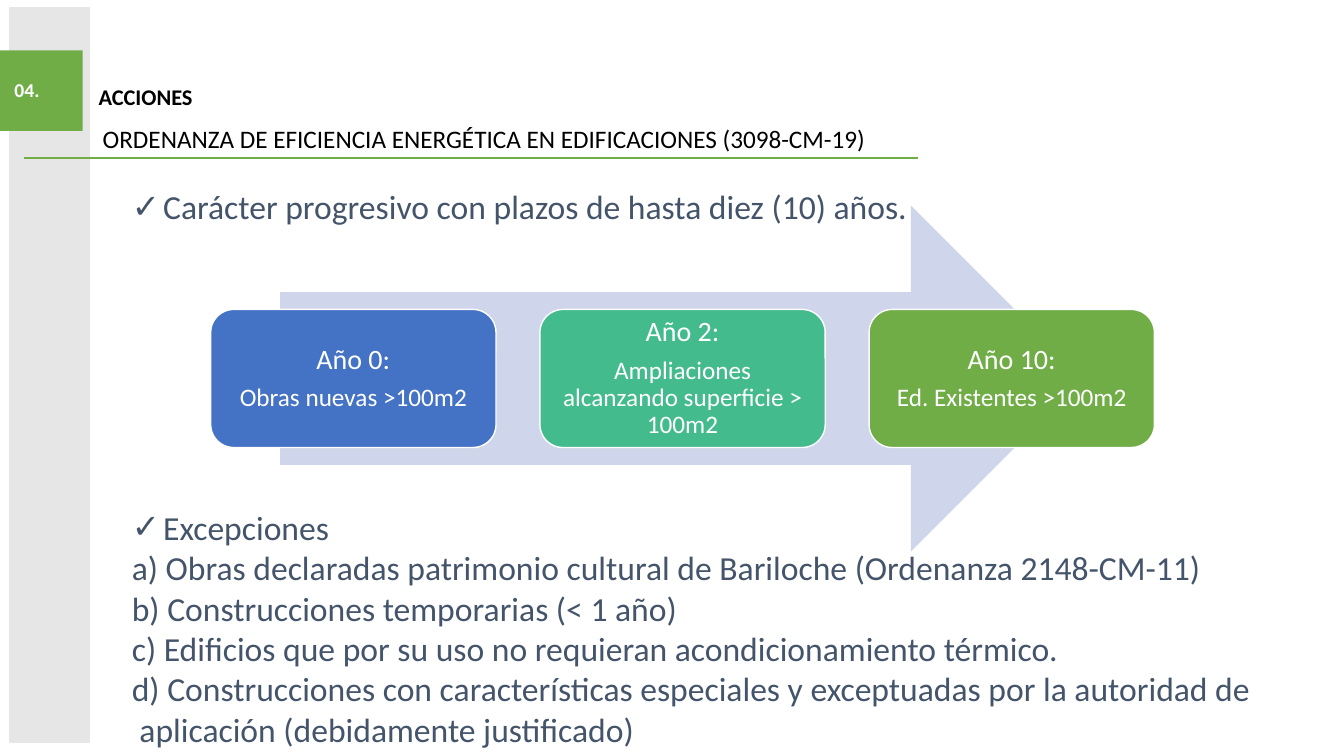
from dataclasses import dataclass

from lxml import etree
from pptx import Presentation
from pptx import util as u
from pptx.dml.color import RGBColor
from pptx.enum import shapes, text
from pptx.oxml.ns import qn

GREEN, WHITE, BLACK, SLATE, GREY = "70AD47", "FFFFFF", "000000", "44546A", "E7E6E6"
SHAPE, ALIGN, ANCHOR = shapes.MSO_SHAPE, text.PP_ALIGN, text.MSO_ANCHOR


@dataclass
class Para:
    text: str
    size: float
    color: str
    bold: bool = False
    align: ALIGN = ALIGN.LEFT
    spacing: float = 1.0
    after: float = 0
    check: bool = False


@dataclass
class Stage:
    year: str
    scope: str
    color: str


def rgb(value: str) -> RGBColor:
    return RGBColor.from_string(value)


def add_check(p) -> None:
    """Give a paragraph a check-mark bullet with a hanging indent."""
    pPr = p._p.get_or_add_pPr()
    indent = u.Inches(0.31)
    pPr.set("marL", str(indent))
    pPr.set("indent", str(-indent))
    etree.SubElement(pPr, qn("a:buFont")).set("typeface", "Arial")
    etree.SubElement(pPr, qn("a:buChar")).set("char", "✓")


def write(sp, paras: list[Para], anchor: ANCHOR, inset: float | None = None) -> None:
    tf = sp.text_frame
    frame = {"word_wrap": True, "vertical_anchor": anchor}
    if inset is not None:
        frame |= {f"margin_{side}": u.Inches(inset) for side in ("left", "top", "right", "bottom")}
    for name, value in frame.items():
        setattr(tf, name, value)
    for i, para in enumerate(paras):
        p = tf.add_paragraph() if i else tf.paragraphs[0]
        layout = {"alignment": para.align, "line_spacing": para.spacing, "space_after": u.Pt(para.after)}
        for name, value in layout.items():
            setattr(p, name, value)
        if para.check:
            add_check(p)
        r = p.add_run()
        r.text = para.text
        font = {"name": "Calibri", "size": u.Pt(para.size), "bold": para.bold}
        for name, value in font.items():
            setattr(r.font, name, value)
        r.font.color.rgb = rgb(para.color)


def add_block(s, kind: SHAPE, box: tuple, fill: str, line: str | None = None):
    sp = s.shapes.add_shape(kind, *map(u.Inches, box))
    sp.shadow.inherit = False
    sp.fill.solid()
    sp.fill.fore_color.rgb = rgb(fill)
    if line:
        sp.line.color.rgb = rgb(line)
        sp.line.width = u.Pt(1)
    else:
        sp.line.fill.background()
    return sp


def add_text(s, box: tuple, paras: list[Para], anchor: ANCHOR = ANCHOR.TOP) -> None:
    write(s.shapes.add_textbox(*map(u.Inches, box)), paras, anchor)


def add_rule(s, left: float, right: float, y: float) -> None:
    line = s.shapes.add_connector(shapes.MSO_CONNECTOR.STRAIGHT, *map(u.Inches, (left, y, right, y)))
    line.line.color.rgb = rgb(GREEN)
    line.line.width = u.Pt(1.5)
    etree.SubElement(line._element.spPr, qn("a:effectLst"))


def body(line: str, check: bool = False) -> Para:
    return Para(line, 24, SLATE, align=ALIGN.JUSTIFY, check=check)


STAGES = [
    Stage("Año 0:", "Obras nuevas >100m2", "4472C4"),
    Stage("Año 2:", "Ampliaciones alcanzando superficie > 100m2", "43BB8D"),
    Stage("Año 10:", "Ed. Existentes >100m2", GREEN),
]
STAGE_LEFT, STAGE_PITCH = 2.09, 3.265
EXCEPTIONS = [
    "a) Obras declaradas patrimonio cultural de Bariloche (Ordenanza 2148-CM-11)",
    "b) Construcciones temporarias (< 1 año)",
    "c) Edificios que por su uso no requieran acondicionamiento térmico.",
    "d) Construcciones con características especiales y exceptuadas por la autoridad de",
    " aplicación (debidamente justificado)",
]


def add_timeline(s) -> None:
    add_block(s, SHAPE.RIGHT_ARROW, (2.78, 2.04, 7.97, 3.43), "CFD5EA")
    for i, stage in enumerate(STAGES):
        box = (STAGE_LEFT + i * STAGE_PITCH, 3.07, 2.83, 1.37)
        card = add_block(s, SHAPE.ROUNDED_RECTANGLE, box, stage.color, WHITE)
        paras = [
            Para(line, size, WHITE, align=ALIGN.CENTER, spacing=0.9, after=size * 0.35)
            for line, size in ((stage.year, 20), (stage.scope, 18))
        ]
        write(card, paras, ANCHOR.MIDDLE, inset=0.08)


def main() -> None:
    prs = Presentation()
    prs.slide_width, prs.slide_height = u.Inches(13.33), u.Inches(7.5)
    s = prs.slides.add_slide(prs.slide_layouts[6])

    add_block(s, SHAPE.RECTANGLE, (0.1, 0.08, 0.79, 7.28), GREY, GREY)
    add_rule(s, 0.24, 9.1, 1.57)
    add_text(s, (1.21, 1.8, 11.97, 0.5),
             [body("Carácter progresivo con plazos de hasta diez (10) años.", check=True)])
    add_timeline(s)
    add_text(s, (1.21, 4.98, 12.1, 2.52),
             [body("Excepciones", check=True), *map(body, EXCEPTIONS)])

    number = add_block(s, SHAPE.RECTANGLE, (0, 0.5, 0.82, 0.8), GREEN)
    write(number, [Para(" 04.", 14, WHITE, bold=True, spacing=0.9)], ANCHOR.MIDDLE)
    add_text(s, (0.92, 1.21, 11.5, 0.67),
             [Para("ORDENANZA DE EFICIENCIA ENERGÉTICA EN EDIFICACIONES (3098-CM-19)",
                   18, BLACK, spacing=0.9)])
    add_text(s, (0.88, 0.25, 11.5, 1.45),
             [Para("ACCIONES", 16, BLACK, bold=True, spacing=0.9)], ANCHOR.MIDDLE)
    prs.save("out.pptx")


if __name__ == "__main__":
    main()
